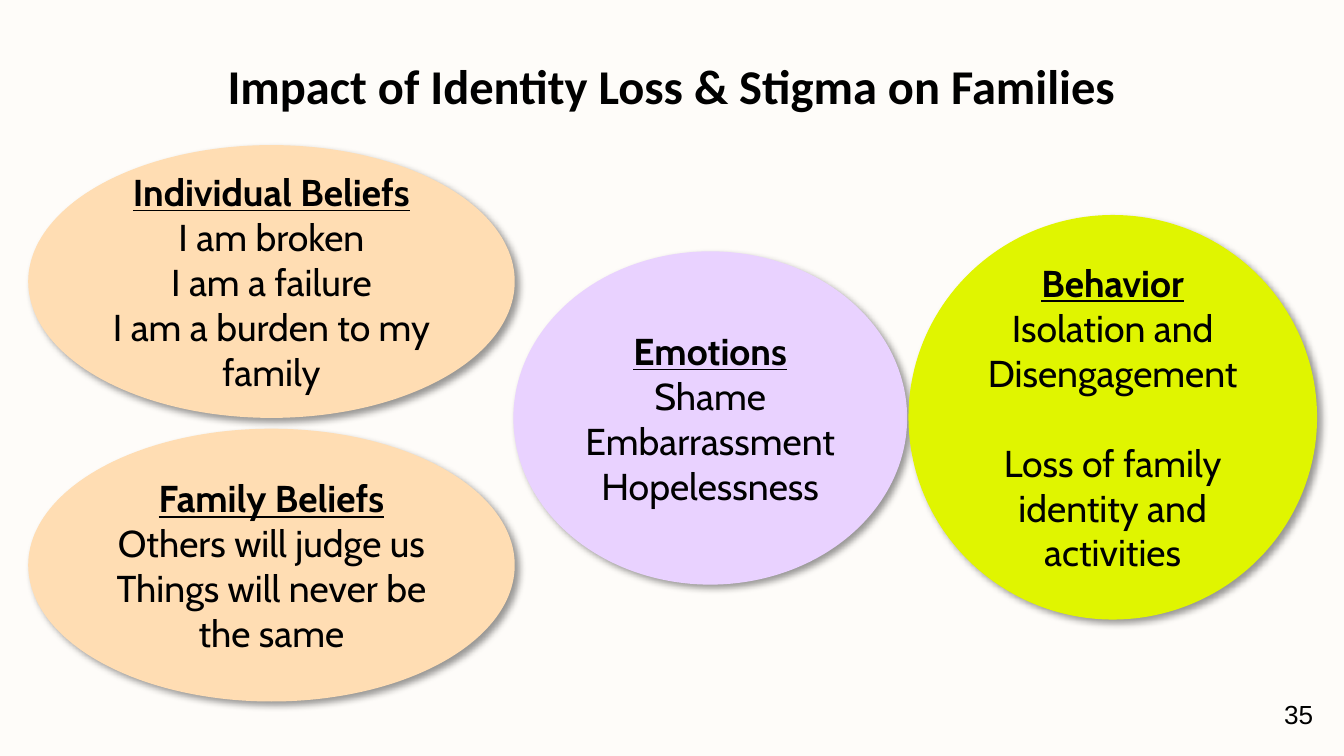
"""Build the slide on how identity loss and stigma affect families."""
from dataclasses import dataclass

from pptx import Presentation
from pptx.dml.color import RGBColor
from pptx.enum.shapes import MSO_SHAPE as Form
from pptx.enum.text import MSO_ANCHOR as Anchor, PP_ALIGN as Align
from pptx.oxml import parse_xml
from pptx.oxml.ns import nsdecls, qn
from pptx.util import Inches, Pt

PAPER = RGBColor(0xFE, 0xFC, 0xF9)
BLACK = RGBColor(0x00, 0x00, 0x00)
PEACH = RGBColor(0xFF, 0xDD, 0xB3)
LILAC = RGBColor(0xE9, 0xD2, 0xFF)
LIME = RGBColor(0xE0, 0xF5, 0x00)

SHADOW = (
    f'<a:outerShdw {nsdecls("a")} blurRad="{Pt(4)}" dist="{Pt(3)}" '
    'dir="2700000" algn="tl" rotWithShape="0"><a:srgbClr val="000000">'
    '<a:alpha val="40000"/></a:srgbClr></a:outerShdw>'
)
HEAD = {"name": "Cabin", "size": Pt(20), "bold": True, "underline": True}
BODY = {"name": "Cabin", "size": Pt(20), "bold": False, "underline": False}
LINE = Pt(24.3)


@dataclass(frozen=True)
class Oval:
    box: tuple[float, float, float, float]
    fill: RGBColor
    head: str
    groups: tuple[tuple[str, ...], ...]


@dataclass(frozen=True)
class Label:
    box: tuple[float, float, float, float]
    text: str
    align: Align
    style: dict


OVALS = (
    Oval((0.21, 1.08, 3.62, 2.03), PEACH, "Individual Beliefs",
         (("I am broken", "I am a failure", "I am a burden to my family"),)),
    Oval((0.21, 3.19, 3.62, 2.03), PEACH, "Family Beliefs",
         (("Others will judge us", "Things will never be the same"),)),
    Oval((3.82, 1.87, 2.93, 2.48), LILAC, "Emotions",
         (("Shame", "Embarrassment", "Hopelessness"),)),
    Oval((6.76, 1.6, 3.04, 3.01), LIME, "Behavior",
         (("Isolation and", "Disengagement"),
          ("Loss of family", "identity and", "activities"))),
)
TITLE = Label((0.34, 0.32, 9.32, 0.63),
              "Impact of Identity Loss & Stigma on Families", Align.CENTER,
              {"name": "Calibri", "size": Pt(26), "bold": True})
NUMBER = Label((9.27, 5.1, 0.6, 0.43), "35", Align.RIGHT,
               {"name": "Arial", "size": Pt(14)})


def write(para, text: str, align: Align, style: dict) -> None:
    para.alignment = align
    run = para.add_run()
    run.text = text
    run.font.color.rgb = BLACK
    for key, value in style.items():
        setattr(run.font, key, value)


def draw_label(slide, label: Label) -> None:
    frame = slide.shapes.add_textbox(*map(Inches, label.box)).text_frame
    frame.word_wrap = True
    frame.vertical_anchor = Anchor.MIDDLE
    for side in ("left", "top", "right", "bottom"):
        setattr(frame, f"margin_{side}", Inches(0.1))
    write(frame.paragraphs[0], label.text, label.align, label.style)


def draw_oval(slide, oval: Oval) -> None:
    shape = slide.shapes.add_shape(Form.OVAL, *map(Inches, oval.box))
    shape.fill.solid()
    shape.fill.fore_color.rgb = oval.fill
    shape.line.fill.background()
    shape.shadow.inherit = False
    shape.element.spPr.find(qn("a:effectLst")).append(parse_xml(SHADOW))
    frame = shape.text_frame
    frame.word_wrap = True
    frame.vertical_anchor = Anchor.MIDDLE
    write(frame.paragraphs[0], oval.head, Align.CENTER, HEAD)
    for part, group in enumerate(oval.groups):
        for row, text in enumerate(group):
            para = frame.add_paragraph()
            if part and not row:
                para.space_before = LINE
            write(para, text, Align.CENTER, BODY)


def main() -> None:
    deck = Presentation()
    deck.slide_width = Inches(10)
    deck.slide_height = Inches(10 * 9 / 16)
    slide = deck.slides.add_slide(deck.slide_layouts[6])
    slide.background.fill.solid()
    slide.background.fill.fore_color.rgb = PAPER
    draw_label(slide, TITLE)
    for oval in OVALS:
        draw_oval(slide, oval)
    draw_label(slide, NUMBER)
    deck.save("out.pptx")


if __name__ == "__main__":
    main()
